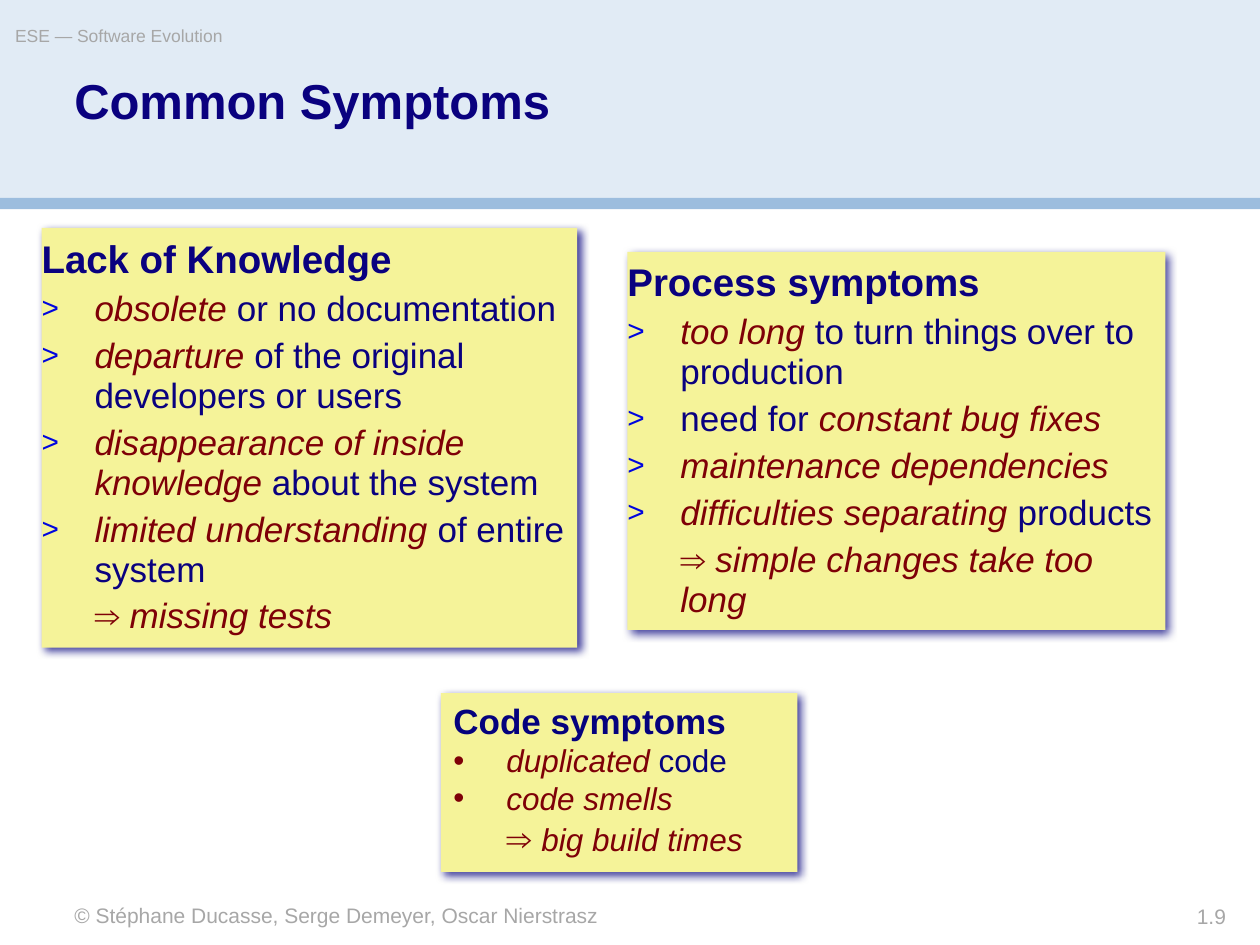
from lxml import etree
from pptx import Presentation
from pptx.dml.color import RGBColor
from pptx.enum.shapes import MSO_SHAPE
from pptx.enum.text import MSO_ANCHOR, PP_ALIGN
from pptx.oxml.ns import qn
from pptx.util import Inches, Pt

RECT = MSO_SHAPE.RECTANGLE
TOP, MIDDLE = MSO_ANCHOR.TOP, MSO_ANCHOR.MIDDLE
LEFT, RIGHT = PP_ALIGN.LEFT, PP_ALIGN.RIGHT

PALE = RGBColor(0xE1, 0xEB, 0xF5)
BLUE = RGBColor(0x9C, 0xBD, 0xDE)
YELLOW = RGBColor(0xF5, 0xF3, 0x99)
NAVY = RGBColor(0x0A, 0x01, 0x7F)
DEEP = RGBColor(0x05, 0x02, 0x7D)
MARK = RGBColor(0x00, 0x05, 0xDF)
RED = RGBColor(0x7E, 0x00, 0x07)
GREY = RGBColor(0xA7, 0xA7, 0xA7)

FONT = "Arial"
HANG = 0.42
ARROW_SIZE = 20

BANDS = [((0, 0, 10, 1.58), PALE), ((0, 1.57, 10, 0.09), BLUE)]

LABELS = [
    ("© Stéphane Ducasse, Serge Demeyer, Oscar Nierstrasz",
     (0.59, 7.16, 4.17, 0.2), 12, GREY, False, LEFT),
    ("1.9", (8.25, 7.17, 1.48, 0.2), 12, GREY, False, RIGHT),
    ("Common Symptoms", (0.59, 0.61, 8.83, 0.89), 28, NAVY, True, LEFT),
    ("ESE — Software Evolution", (0.12, 0.2, 5.9, 0.28), 10, GREY, False, LEFT),
]

LIST_STYLE = dict(anchor=MIDDLE, inset=(0, 0), sizes=(22, 20), color=NAVY,
                  bullet=">", mark=MARK, mark_pct=85, leading=0.95, gap=(4, 4))
CODE_STYLE = dict(anchor=TOP, inset=(0.1, 0.05), sizes=(20, 18), color=DEEP,
                  bullet="•", mark=RED, mark_pct=100, leading=1.0, gap=(0, 0))

# each item alternates stressed and plain text, starting with stressed
CARDS = [
    ("Lack of Knowledge", (0.33, 1.81, 4.25, 3.33), LIST_STYLE,
     [("obsolete", " or no documentation"),
      ("departure", " of the original developers or users"),
      ("disappearance of inside knowledge", " about the system"),
      ("limited understanding", " of entire system")],
     "missing tests"),
    ("Process symptoms", (4.98, 2, 4.27, 3), LIST_STYLE,
     [("too long", " to turn things over to production"),
      ("", "need for ", "constant bug fixes"),
      ("maintenance dependencies",),
      ("difficulties separating ", "products")],
     "simple changes take too long"),
    ("Code symptoms", (3.5, 5.5, 2.83, 1.42), CODE_STYLE,
     [("duplicated ", "code"), ("code smells",)],
     "big build times"),
]


def add_run(p, text, size, color, bold=False, italic=False):
    r = p.add_run()
    r.text = text
    f = r.font
    f.name, f.size, f.bold, f.italic = FONT, Pt(size), bold, italic
    f.color.rgb = color


def add_rect(s, box, color):
    sp = s.shapes.add_shape(RECT, *map(Inches, box))
    sp.shadow.inherit = False
    sp.fill.solid()
    sp.fill.fore_color.rgb = color
    sp.line.fill.background()
    return sp


def set_frame(tf, anchor, inset):
    tf.word_wrap = True
    tf.vertical_anchor = anchor
    tf.margin_left = tf.margin_right = Inches(inset[0])
    tf.margin_top = tf.margin_bottom = Inches(inset[1])


def add_label(s, text, box, size, color, bold, align):
    tf = s.shapes.add_textbox(*map(Inches, box)).text_frame
    set_frame(tf, TOP, (0, 0))
    p = tf.paragraphs[0]
    p.alignment = align
    if bold:
        p.line_spacing = 0.9
    add_run(p, text, size, color, bold)


def add_shadow(sp):
    effects = sp._element.spPr.find(qn("a:effectLst"))
    shadow = etree.SubElement(effects, qn("a:outerShdw"), blurRad=str(Pt(5)),
                              dist=str(Pt(3)), dir="2700000", rotWithShape="0")
    clr = etree.SubElement(shadow, qn("a:srgbClr"), val=str(DEEP))
    etree.SubElement(clr, qn("a:alpha"), val="75000")


def add_bullet(p, style):
    pPr = p._p.get_or_add_pPr()
    clr = etree.SubElement(pPr, qn("a:buClr"))
    etree.SubElement(clr, qn("a:srgbClr"), val=str(style["mark"]))
    etree.SubElement(pPr, qn("a:buSzPct"), val=str(style["mark_pct"] * 1000))
    etree.SubElement(pPr, qn("a:buFont"), typeface=FONT)
    etree.SubElement(pPr, qn("a:buChar"), char=style["bullet"])


def add_line(tf, style, left, indent):
    p = tf.add_paragraph()
    pPr = p._p.get_or_add_pPr()
    pPr.set("marL", str(Inches(left)))
    pPr.set("indent", str(Inches(indent)))
    p.alignment = LEFT
    p.line_spacing = style["leading"]
    p.space_before = Pt(style["gap"][0])
    return p


def add_card(s, heading, box, style, items, result):
    sp = add_rect(s, box, YELLOW)
    add_shadow(sp)
    tf = sp.text_frame
    set_frame(tf, style["anchor"], style["inset"])
    head_size, size = style["sizes"]

    p = tf.paragraphs[0]
    p.alignment = LEFT
    p.line_spacing = style["leading"]
    add_run(p, heading, head_size, style["color"], bold=True)

    for item in items:
        p = add_line(tf, style, HANG, -HANG)
        add_bullet(p, style)
        for i, text in enumerate(item):
            stressed = i % 2 == 0
            if text:
                add_run(p, text, size, RED if stressed else style["color"],
                        italic=stressed)

    p = add_line(tf, style, HANG, 0)
    add_run(p, "⇒ ", ARROW_SIZE, RED, italic=True)
    add_run(p, result, size, RED, italic=True)


def main():
    prs = Presentation()
    prs.slide_width, prs.slide_height = Inches(10), Inches(7.5)
    s = prs.slides.add_slide(prs.slide_layouts[6])
    for band in BANDS:
        add_rect(s, *band)
    for label in LABELS:
        add_label(s, *label)
    for card in CARDS:
        add_card(s, *card)
    prs.save("out.pptx")


if __name__ == "__main__":
    main()
